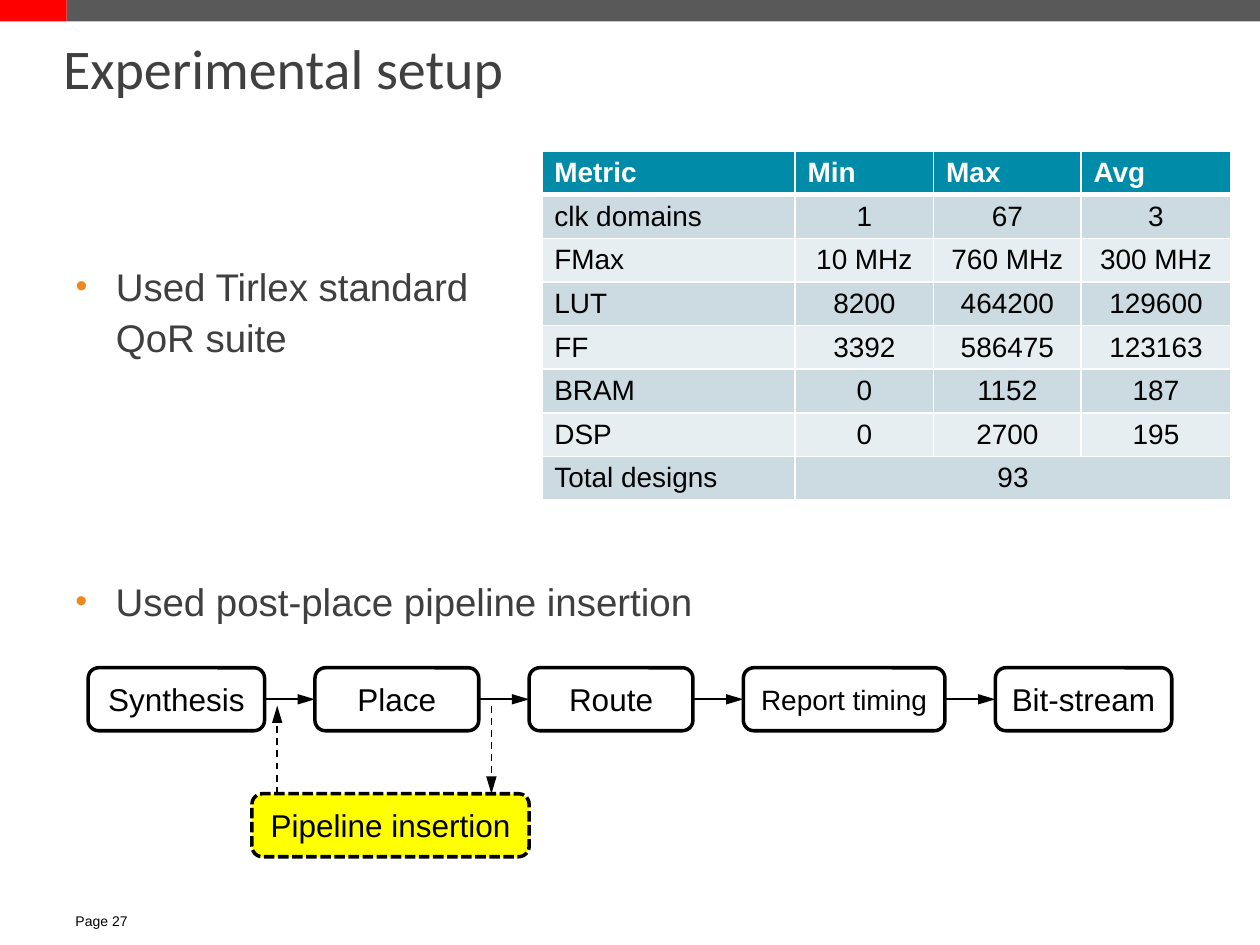
from lxml import etree
from pptx import Presentation
from pptx.dml.color import RGBColor
from pptx.enum.dml import MSO_LINE
from pptx.enum.shapes import MSO_CONNECTOR, MSO_SHAPE
from pptx.enum.text import MSO_ANCHOR, MSO_AUTO_SIZE, PP_ALIGN
from pptx.oxml.ns import qn
from pptx.util import Inches, Pt

THEME = {
    "heading_font": "Calibri", "body_font": "Arial",
    "title_size": 32, "bullet_size": 22, "step_size": 18, "table_size": 16, "page_size": 8,
    "title": "404040", "body": "3F3F3F", "bullet": "EC891D", "ink": "000000", "paper": "FFFFFF",
    "bar": "595959", "bar_accent": "FF0000", "highlight": "FFFF00",
    "table_head": "008CA8", "table_bands": ("CCDAE1", "E7EEF1"),
}

TITLE = "Experimental setup"
PAGE = "Page 27"
SUITE_POINT = "Used Tirlex standard QoR suite"
PIPELINE_POINT = "Used post-place pipeline insertion"

METRICS = [
    ("Metric", "Min", "Max", "Avg"),
    ("clk domains", "1", "67", "3"),
    ("FMax", "10 MHz", "760 MHz", "300 MHz"),
    ("LUT", "8200", "464200", "129600"),
    ("FF", "3392", "586475", "123163"),
    ("BRAM", "0", "1152", "187"),
    ("DSP", "0", "2700", "195"),
    ("Total designs", "93"),  # the value spans the remaining columns
]
COLUMN_WIDTHS = (2.01, 1.1, 1.17, 1.19)
TABLE_LEFT, TABLE_TOP, TABLE_HEIGHT = 4.3, 1.2, 2.77

# Label, width, text size
STEPS = [
    ("Synthesis", 1.4, THEME["step_size"]),
    ("Place", 1.3, THEME["step_size"]),
    ("Route", 1.3, THEME["step_size"]),
    ("Report timing", 1.6, 16),
    ("Bit-stream", 1.4, THEME["step_size"]),
]
STEP_LEFT, STEP_TOP, STEP_HEIGHT, STEP_GAP = 0.7, 5.3, 0.5, 0.4
INSERTION = ("Pipeline insertion", 2.0, 6.3, 2.2)
DETOUR_TOP = 5.6
DETOUR_INSET = 0.2


def color(name):
    return RGBColor.from_string(THEME.get(name, name))


def box(left, top, width, height):
    return [Inches(value) for value in (left, top, width, height)]


def style_text(paragraph, size, ink, font="body_font", bold=False):
    for run in paragraph.runs:
        run.font.name = THEME[font]
        run.font.size = Pt(size)
        run.font.bold = bold
        run.font.color.rgb = color(ink)


def place(shape, *bounds):
    shape.left, shape.top, shape.width, shape.height = box(*bounds)


def add_bar(slide, left, width, fill):
    bar = slide.shapes.add_shape(MSO_SHAPE.RECTANGLE, *box(left, 0, width, 0.17))
    bar.shadow.inherit = False
    bar.fill.solid()
    bar.fill.fore_color.rgb = color(fill)
    bar.line.fill.background()


def write_bullet(shape, text):
    frame = shape.text_frame
    frame.word_wrap = True
    frame.auto_size = MSO_AUTO_SIZE.NONE
    frame.vertical_anchor = MSO_ANCHOR.TOP
    frame.text = text
    paragraph = frame.paragraphs[0]
    properties = paragraph._p.get_or_add_pPr()
    properties.set("marL", str(Inches(0.32)))
    properties.set("indent", str(Inches(-0.32)))
    bullet_color = etree.SubElement(properties, qn("a:buClr"))
    etree.SubElement(bullet_color, qn("a:srgbClr"), val=THEME["bullet"])
    etree.SubElement(properties, qn("a:buSzPct"), val="88000")
    etree.SubElement(properties, qn("a:buFont"), typeface=THEME["body_font"])
    etree.SubElement(properties, qn("a:buChar"), char="•")
    paragraph.line_spacing = 1.1
    paragraph.space_before = Pt(0)
    style_text(paragraph, THEME["bullet_size"], "body")


def set_borders(cell, bottom_width):
    properties = cell._tc.get_or_add_tcPr()
    widths = {"lnL": 1, "lnR": 1, "lnT": 1, "lnB": bottom_width}
    for position, (side, width) in enumerate(widths.items()):
        line = etree.Element(qn(f"a:{side}"), w=str(Pt(width)))
        fill = etree.SubElement(line, qn("a:solidFill"))
        etree.SubElement(fill, qn("a:srgbClr"), val=THEME["paper"])
        properties.insert(position, line)


def add_metrics_table(slide):
    bounds = box(TABLE_LEFT, TABLE_TOP, sum(COLUMN_WIDTHS), TABLE_HEIGHT)
    table = slide.shapes.add_table(len(METRICS), len(COLUMN_WIDTHS), *bounds).table
    for column, width in zip(table.columns, COLUMN_WIDTHS):
        column.width = Inches(width)
    last_row = len(METRICS) - 1
    table.cell(last_row, 1).merge(table.cell(last_row, len(COLUMN_WIDTHS) - 1))
    for row_index, values in enumerate(METRICS):
        header = row_index == 0
        fill = THEME["table_head"] if header else THEME["table_bands"][(row_index - 1) % 2]
        for column_index in range(len(COLUMN_WIDTHS)):
            cell = table.cell(row_index, column_index)
            cell.fill.solid()
            cell.fill.fore_color.rgb = color(fill)
            cell.margin_top = cell.margin_bottom = Inches(0.04)
            cell.vertical_anchor = MSO_ANCHOR.MIDDLE
            set_borders(cell, 3 if header else 1)
            if column_index < len(values):
                cell.text_frame.text = values[column_index]
                paragraph = cell.text_frame.paragraphs[0]
                left_aligned = header or column_index == 0
                paragraph.alignment = PP_ALIGN.LEFT if left_aligned else PP_ALIGN.CENTER
                style_text(paragraph, THEME["table_size"], "paper" if header else "ink", bold=header)


def add_step(slide, label, left, top, width, size, fill="paper"):
    step = slide.shapes.add_shape(MSO_SHAPE.ROUNDED_RECTANGLE, *box(left, top, width, STEP_HEIGHT))
    step.shadow.inherit = False
    step.fill.solid()
    step.fill.fore_color.rgb = color(fill)
    step.line.color.rgb = color("ink")
    step.line.width = Pt(2)
    frame = step.text_frame
    frame.word_wrap = False
    frame.vertical_anchor = MSO_ANCHOR.MIDDLE
    frame.text = label
    frame.paragraphs[0].alignment = PP_ALIGN.CENTER
    style_text(frame.paragraphs[0], size, "ink")
    return step


def add_arrow(slide, start, end, dash=None):
    points = [Inches(value) for value in (*start, *end)]
    arrow = slide.shapes.add_connector(MSO_CONNECTOR.STRAIGHT, *points)
    arrow.line.color.rgb = color("ink")
    arrow.line.width = Pt(1)
    if dash:
        arrow.line.dash_style = dash
    etree.SubElement(arrow.line._get_or_add_ln(), qn("a:tailEnd"), type="triangle", w="med", len="lg")
    etree.SubElement(arrow._element.spPr, qn("a:effectLst"))
    return arrow


def add_flow(slide):
    left, middle = STEP_LEFT, STEP_TOP + STEP_HEIGHT / 2
    previous = None
    for label, width, size in STEPS:
        step = add_step(slide, label, left, STEP_TOP, width, size)
        if previous:
            arrow = add_arrow(slide, (left - STEP_GAP, middle), (left, middle))
            arrow.begin_connect(previous, 3)
            arrow.end_connect(step, 1)
        previous = step
        left += width + STEP_GAP

    label, left, top, width = INSERTION
    insertion = add_step(slide, label, left, top, width, THEME["step_size"], "highlight")
    insertion.line.dash_style = MSO_LINE.SQUARE_DOT
    back_x, out_x = left + DETOUR_INSET, left + width - 0.3
    add_arrow(slide, (out_x, DETOUR_TOP), (out_x, top), MSO_LINE.DASH)
    add_arrow(slide, (back_x, top), (back_x, DETOUR_TOP), MSO_LINE.DASH)


def main():
    presentation = Presentation()
    presentation.slide_width, presentation.slide_height = Inches(10), Inches(7.5)
    slide = presentation.slides.add_slide(presentation.slide_layouts[1])
    add_bar(slide, 0.53, 9.47, "bar")
    add_bar(slide, 0, 0.53, "bar_accent")

    title = slide.shapes.title
    place(title, 0.5, 0.23, 9, 0.6)
    frame = title.text_frame
    frame.margin_left = 0
    frame.auto_size = MSO_AUTO_SIZE.NONE
    frame.vertical_anchor = MSO_ANCHOR.MIDDLE
    frame.text = TITLE
    frame.paragraphs[0].alignment = PP_ALIGN.LEFT
    style_text(frame.paragraphs[0], THEME["title_size"], "title", "heading_font")

    body = slide.placeholders[1]
    place(body, 0.5, 2, 3.4, 1)
    write_bullet(body, SUITE_POINT)
    write_bullet(slide.shapes.add_textbox(*box(0.5, 4.5, 5.2, 0.5)), PIPELINE_POINT)

    add_metrics_table(slide)
    add_flow(slide)

    page = slide.shapes.add_textbox(*box(0.5, 7.19, 0.92, 0.27))
    page.text_frame.word_wrap = True
    page.text_frame.text = PAGE
    style_text(page.text_frame.paragraphs[0], THEME["page_size"], "ink")
    presentation.save("out.pptx")


if __name__ == "__main__":
    main()
